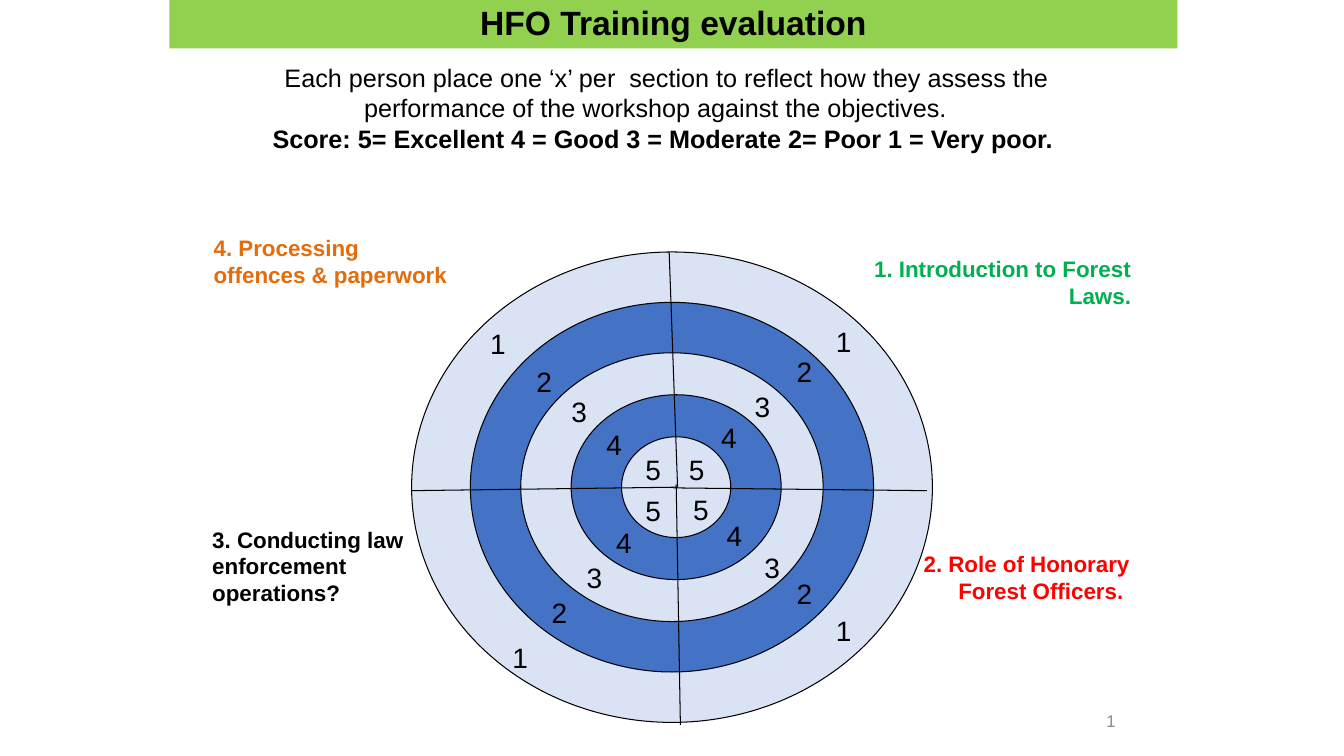
import pptx
import pptx.util
import pptx.dml.color
import pptx.enum.shapes
import pptx.enum.text
import pptx.oxml.ns
from lxml import etree

Pt = pptx.util.Pt
RGB = pptx.dml.color.RGBColor
Align = pptx.enum.text.PP_ALIGN
Anchor = pptx.enum.text.MSO_ANCHOR
Shape = pptx.enum.shapes.MSO_SHAPE
Line = pptx.enum.shapes.MSO_CONNECTOR

BLACK = RGB(0x00, 0x00, 0x00)
WHITE = RGB(0xFF, 0xFF, 0xFF)
PALE = RGB(0xDA, 0xE3, 0xF3)
BLUE = RGB(0x44, 0x72, 0xC4)
LIME = RGB(0x92, 0xD0, 0x50)
ORANGE = RGB(0xE4, 0x6C, 0x0A)
GREEN = RGB(0x00, 0xB0, 0x50)
RED = RGB(0xFF, 0x00, 0x00)
GREY = RGB(0x89, 0x89, 0x89)


class Board:
    """Holds the style and the current slide."""

    face = "Arial"
    edge = Pt(0.75)

    def __init__(self, deck):
        self.slide = deck.slides.add_slide(deck.slide_layouts[5])
        self.shapes = self.slide.shapes

    def words(self, shape, lines, size, color=BLACK, align=Align.LEFT,
              anchor=Anchor.TOP):
        """Fill a shape with (text, bold) lines."""
        frame = shape.text_frame
        setup = {"word_wrap": True, "vertical_anchor": anchor,
                 "auto_size": pptx.enum.text.MSO_AUTO_SIZE.NONE}
        for key, value in setup.items():
            setattr(frame, key, value)
        for i, (text, bold) in enumerate(lines):
            para = frame.add_paragraph() if i else frame.paragraphs[0]
            para.alignment = align
            run = para.add_run()
            run.text = text
            style = {"name": self.face, "size": Pt(size), "bold": bold}
            for key, value in style.items():
                setattr(run.font, key, value)
            run.font.color.rgb = color

    def title(self, text, box, fill):
        shape = self.shapes.title
        for key, value in zip(("left", "top", "width", "height"), box):
            setattr(shape, key, Pt(value))
        shape.fill.solid()
        shape.fill.fore_color.rgb = fill
        self.words(shape, [(text, True)], 24, align=Align.CENTER)

    def solid(self, kind, box, fill, edge=None):
        shape = self.shapes.add_shape(kind, *map(Pt, box))
        shape.shadow.inherit = False
        shape.fill.solid()
        shape.fill.fore_color.rgb = fill
        if edge is None:
            shape.line.fill.background()
        else:
            shape.line.color.rgb = edge
            shape.line.width = self.edge
        return shape

    def label(self, text, box, size, bold=False, **style):
        shape = self.shapes.add_textbox(*map(Pt, box))
        self.words(shape, [(text, bold)], size, **style)

    def line(self, ends):
        line = self.shapes.add_connector(Line.STRAIGHT, *map(Pt, ends))
        line.line.color.rgb = BLACK
        line.line.width = self.edge
        etree.SubElement(line._element.spPr, pptx.oxml.ns.qn("a:effectLst"))


def main():
    deck = pptx.Presentation()
    deck.slide_width, deck.slide_height = Pt(960), Pt(540)
    board = Board(deck)

    # Heading and instructions
    board.title("HFO Training evaluation", (121, -2, 720, 36.5), LIME)
    intro = board.solid(Shape.RECTANGLE, (148.5, 41, 655, 73), WHITE)
    board.words(intro, [
        ("Each person place one ‘x’ per  section to reflect how they assess "
         "the performance of the workshop against the objectives.\t", False),
        ("Score: 5= Excellent 4 = Good 3 = Moderate 2= Poor 1 = Very poor. ",
         True),
    ], 18, align=Align.CENTER)

    # Target rings, outermost first
    rings = [(294, 180, 372, 336), (336, 216, 288, 264), (372, 252, 216, 192),
             (408, 282, 150, 132), (444, 312, 78, 72)]
    for i, box in enumerate(rings):
        board.solid(Shape.OVAL, box, BLUE if i % 2 else PALE, BLACK)

    # Lines between the four sections
    for ends in [(481, 348.5, 662, 350.5), (484, 348, 478, 180),
                 (483, 346, 486, 518), (294, 350.5, 484, 348)]:
        board.line(ends)

    # Scores in each section, from 5 at the centre to 1 at the rim
    marks = [
        [(454, 320), (426, 302), (401, 278), (376, 257), (343, 230)],
        [(485, 320), (508, 297), (532, 275), (562, 250), (590, 228)],
        [(488, 348), (512, 367), (539, 390), (562, 408), (590, 435)],
        [(454, 349), (433, 372), (412, 397), (387, 422), (359, 454)],
    ]
    for spots in marks:
        for score, (x, y) in zip(range(5, 0, -1), spots):
            board.label(str(score), (x, y, 30, 31), 20)

    # Section names
    names = [
        ("1. Introduction to Forest Laws.", (593, 179, 222, 46),
         GREEN, Align.RIGHT),
        ("2. Role of Honorary Forest Officers. ", (652, 389.5, 162, 65.5),
         RED, Align.RIGHT),
        ("3. Conducting law enforcement operations?", (144.5, 372, 165, 65.5),
         BLACK, Align.LEFT),
        ("4. Processing offences & paperwork", (145.5, 164, 183.5, 46),
         ORANGE, Align.LEFT),
    ]
    for text, box, color, align in names:
        board.label(text, box, 16, True, color=color, align=align)

    # Page number
    board.label("1", (636, 500.5, 168, 29), 12, color=GREY,
                align=Align.RIGHT, anchor=Anchor.MIDDLE)

    deck.save("out.pptx")


if __name__ == "__main__":
    main()
